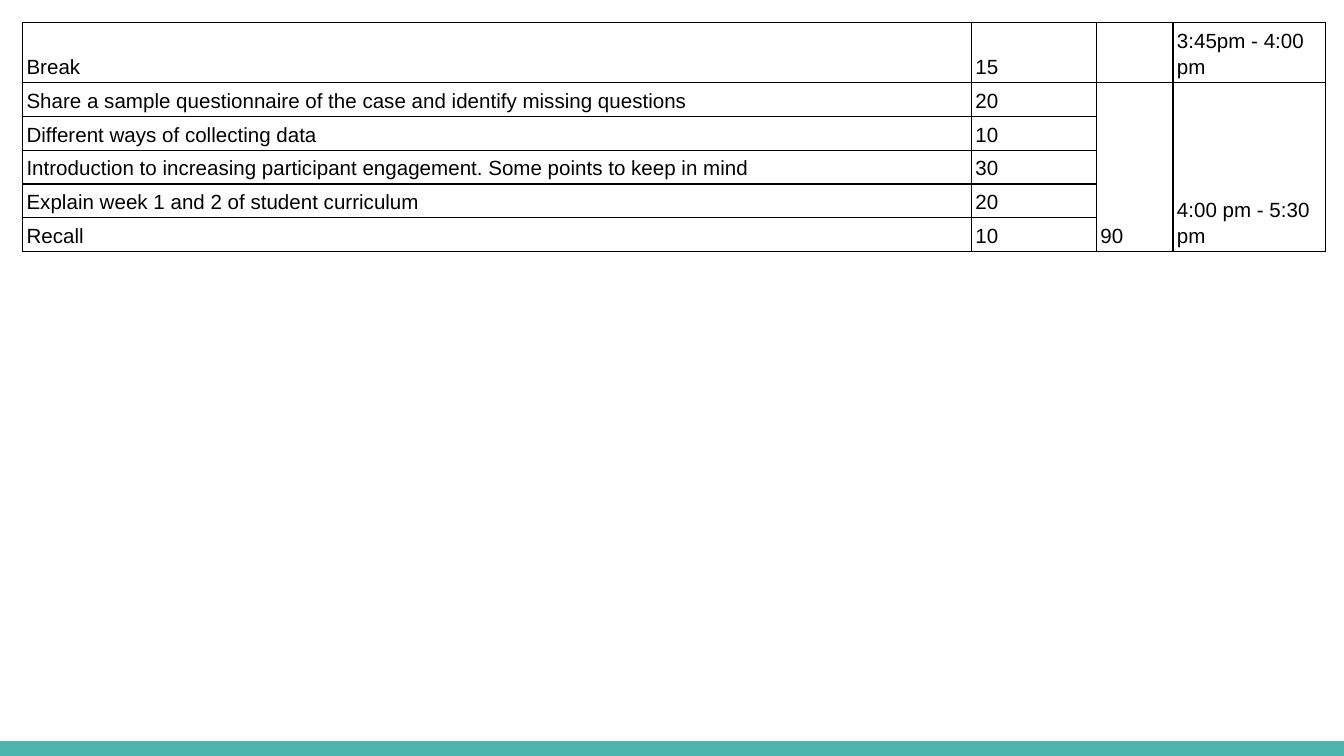
from lxml.etree import SubElement
from pptx import Presentation
from pptx.dml.color import RGBColor
from pptx.enum.shapes import MSO_SHAPE as Shape
from pptx.enum.text import MSO_ANCHOR as Anchor
from pptx.oxml import parse_xml
from pptx.oxml.ns import nsdecls, qn
from pptx.util import Inches, Pt

BLACK = RGBColor(0x00, 0x00, 0x00)
TEAL = RGBColor(0x4D, 0xB6, 0xAC)

PAGE_WIDTH = 10
PAGE_HEIGHT = PAGE_WIDTH * 9 / 16
BAR_HEIGHT = 0.11
COLUMN_WIDTHS = [7.06, 0.93, 0.57, 1.13]
ROW_HEIGHTS = [0.25] + [0.21] * 5
CELL_MARGIN = Pt(2)
OUTER_LINE, INNER_LINE = 0.75, 1

AGENDA = [
    ("Break", "15", "", "3:45pm - 4:00 pm"),
    ("Share a sample questionnaire of the case and identify missing questions",
     "20", "90", "4:00 pm - 5:30 pm"),
    ("Different ways of collecting data", "10"),
    ("Introduction to increasing participant engagement. Some points to keep in mind", "30"),
    ("Explain week 1 and 2 of student curriculum", "20"),
    ("Recall", "10"),
]


def set_borders(cell, widths):
    properties = cell._tc.get_or_add_tcPr()
    for index, (side, width) in enumerate(widths.items()):
        line = parse_xml(f'<a:ln{side} {nsdecls("a")} w="{Pt(width)}"/>')
        fill = SubElement(line, qn("a:solidFill"))
        SubElement(fill, qn("a:srgbClr"), val=str(BLACK))
        properties.insert(index, line)


def format_cell(cell):
    cell.fill.background()
    cell.vertical_anchor = Anchor.BOTTOM
    cell.margin_left = cell.margin_right = CELL_MARGIN
    cell.margin_top = cell.margin_bottom = CELL_MARGIN
    for para in cell.text_frame.paragraphs:
        para.line_spacing = 1.15
        for span in para.runs:
            span.font.name = "Arial"
            span.font.size = Pt(11)
            span.font.color.rgb = BLACK


def add_agenda(page, left, top, width, height):
    frame = page.shapes.add_table(
        len(ROW_HEIGHTS), len(COLUMN_WIDTHS),
        Inches(left), Inches(top), Inches(width), Inches(height))
    table = frame.table
    table.first_row = table.horz_banding = False
    for column, column_width in zip(table.columns, COLUMN_WIDTHS):
        column.width = Inches(column_width)
    for row, row_height in zip(table.rows, ROW_HEIGHTS):
        row.height = Inches(row_height)

    for row, texts in enumerate(AGENDA):
        for column, text in enumerate(texts):
            table.cell(row, column).text_frame.text = text

    last_column = len(COLUMN_WIDTHS) - 1
    for row in table.rows:
        for column, cell in enumerate(row.cells):
            format_cell(cell)
            set_borders(cell, {
                "L": OUTER_LINE if column == 0 else INNER_LINE,
                "R": OUTER_LINE if column == last_column else INNER_LINE,
                "T": OUTER_LINE,
                "B": OUTER_LINE,
            })

    for column in (2, 3):
        table.cell(1, column).merge(table.cell(len(AGENDA) - 1, column))


def add_bottom_bar(page, left, top, width, height):
    bar = page.shapes.add_shape(
        Shape.RECTANGLE, Inches(left), Inches(top), Inches(width), Inches(height))
    bar.shadow.inherit = False
    bar.fill.solid()
    bar.fill.fore_color.rgb = TEAL
    bar.line.fill.background()


def main():
    deck = Presentation()
    deck.slide_width, deck.slide_height = Inches(PAGE_WIDTH), Inches(PAGE_HEIGHT)
    page = deck.slides.add_slide(deck.slide_layouts[6])
    add_bottom_bar(page, 0, PAGE_HEIGHT - BAR_HEIGHT, PAGE_WIDTH, BAR_HEIGHT)
    add_agenda(page, 0.17, 0.17, sum(COLUMN_WIDTHS), sum(ROW_HEIGHTS))
    deck.save("out.pptx")


if __name__ == "__main__":
    main()
